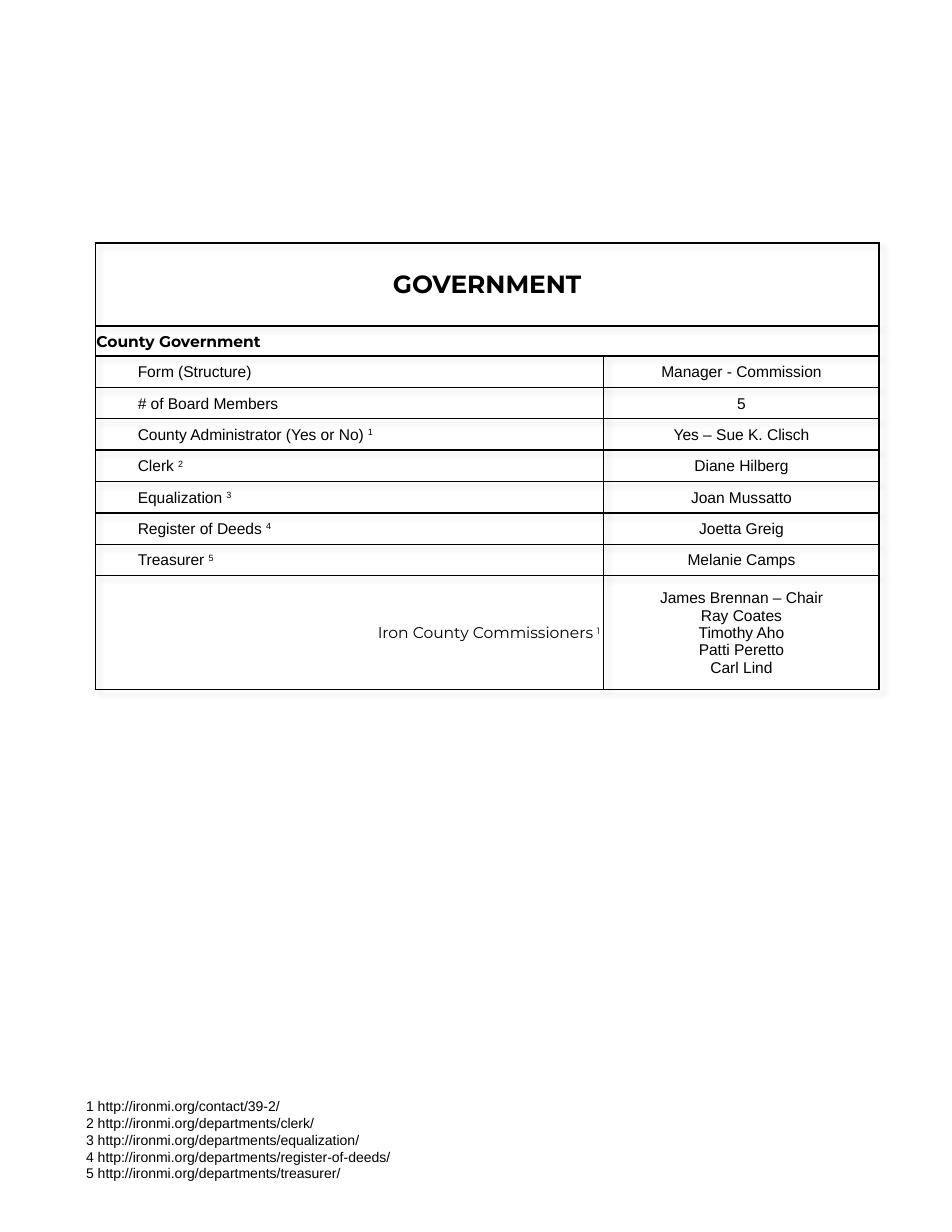
from lxml.etree import SubElement
from pptx import Presentation
from pptx.dml.color import RGBColor
from pptx.enum.text import MSO_ANCHOR, PP_ALIGN
from pptx.oxml import parse_xml
from pptx.oxml.ns import nsdecls, qn
from pptx.util import Inches, Pt

COLORS = {"ink": "000000", "shadow": "000000"}
BODY_FONT, HEADING_FONT = "Arial", "Montserrat"

TITLE = "GOVERNMENT"
SECTION = "County Government"
# label, footnote number, values
OFFICES = [
    ("Form (Structure)", "", ["Manager - Commission"]),
    ("# of Board Members", "", ["5"]),
    ("County Administrator (Yes or No) ", "1", ["Yes – Sue K. Clisch"]),
    ("Clerk ", "2", ["Diane Hilberg"]),
    ("Equalization ", "3", ["Joan Mussatto"]),
    ("Register of Deeds ", "4", ["Joetta Greig"]),
    ("Treasurer ", "5", ["Melanie Camps"]),
    ("Iron County Commissioners ", "1 ",
     ["James Brennan – Chair", "Ray Coates", "Timothy Aho", "Patti Peretto", "Carl Lind"]),
]
SOURCES = [
    "http://ironmi.org/contact/39-2/",
    "http://ironmi.org/departments/clerk/",
    "http://ironmi.org/departments/equalization/",
    "http://ironmi.org/departments/register-of-deeds/",
    "http://ironmi.org/departments/treasurer/",
]
COLUMN_WIDTHS = [4.54, 2.46]
ROW_HEIGHTS = [0.74, 0.27] + [0.28] * 7 + [1.02]


def write_lines(text_frame, lines, size, font=BODY_FONT, bold=False, align=PP_ALIGN.LEFT):
    for index, line in enumerate(lines):
        paragraph = text_frame.add_paragraph() if index else text_frame.paragraphs[0]
        paragraph.add_run().text = line
        paragraph.alignment = align
        paragraph.font.size = Pt(size)
        paragraph.font.name = font
        paragraph.font.bold = bold
        paragraph.font.color.rgb = RGBColor.from_string(COLORS["ink"])


def fill_cell(cell, lines, size=10, indent=0.01, **style):
    cell.margin_left, cell.margin_right = Inches(indent), Inches(0.01)
    cell.margin_top, cell.margin_bottom = Inches(0.01), 0
    cell.vertical_anchor = MSO_ANCHOR.MIDDLE
    write_lines(cell.text_frame, lines, size, **style)


def add_footnote_mark(cell, mark):
    run = cell.text_frame.paragraphs[0].add_run()
    run.text = mark
    run.font._element.set("baseline", "30000")


def outline_cell(cell):
    properties = cell._tc.get_or_add_tcPr()
    for side in ("lnL", "lnR", "lnT", "lnB"):
        line = SubElement(properties, qn(f"a:{side}"), w=str(Pt(1)))
        fill = SubElement(line, qn("a:solidFill"))
        SubElement(fill, qn("a:srgbClr"), val=COLORS["ink"])
    cell.fill.background()


def add_table_shadow(table):
    table._tbl.tblPr.insert(0, parse_xml(
        f'<a:effectLst {nsdecls("a")}>'
        f'<a:outerShdw blurRad="{Inches(0.05)}" dist="{Inches(0.05)}" dir="2700000" algn="tl">'
        f'<a:srgbClr val="{COLORS["shadow"]}"><a:alpha val="15000"/></a:srgbClr>'
        '</a:outerShdw></a:effectLst>'))


def add_government_table(slide):
    table = slide.shapes.add_table(
        len(ROW_HEIGHTS), len(COLUMN_WIDTHS), Inches(0.85), Inches(2.17),
        Inches(sum(COLUMN_WIDTHS)), Inches(sum(ROW_HEIGHTS))).table
    table.first_row = table.horz_banding = False
    add_table_shadow(table)
    for column, width in zip(table.columns, COLUMN_WIDTHS):
        column.width = Inches(width)
    for row, height in zip(table.rows, ROW_HEIGHTS):
        row.height = Inches(height)
    for cell in table.iter_cells():
        outline_cell(cell)

    for row in range(2):
        table.cell(row, 0).merge(table.cell(row, 1))
    fill_cell(table.cell(0, 0), [TITLE], 16, font=HEADING_FONT, bold=True, align=PP_ALIGN.CENTER)
    fill_cell(table.cell(1, 0), [SECTION], font=HEADING_FONT, bold=True)

    for row, (label, mark, values) in enumerate(OFFICES, start=2):
        label_cell = table.cell(row, 0)
        is_group = len(values) > 1
        fill_cell(label_cell, [label], indent=0.38,
                  font=HEADING_FONT if is_group else BODY_FONT,
                  align=PP_ALIGN.RIGHT if is_group else PP_ALIGN.LEFT)
        if mark:
            add_footnote_mark(label_cell, mark)
        fill_cell(table.cell(row, 1), values, align=PP_ALIGN.CENTER)


def add_sources(slide):
    text_frame = slide.shapes.add_textbox(
        Inches(0.67), Inches(9.75), Inches(4.25), Inches(0.86)).text_frame
    text_frame.word_wrap = True
    write_lines(text_frame, [f"{number} {url}" for number, url in enumerate(SOURCES, start=1)], 9)


def main():
    presentation = Presentation()
    presentation.slide_width, presentation.slide_height = Inches(8.5), Inches(11)
    slide = presentation.slides.add_slide(presentation.slide_layouts[6])
    add_government_table(slide)
    add_sources(slide)
    presentation.save("out.pptx")


if __name__ == "__main__":
    main()
